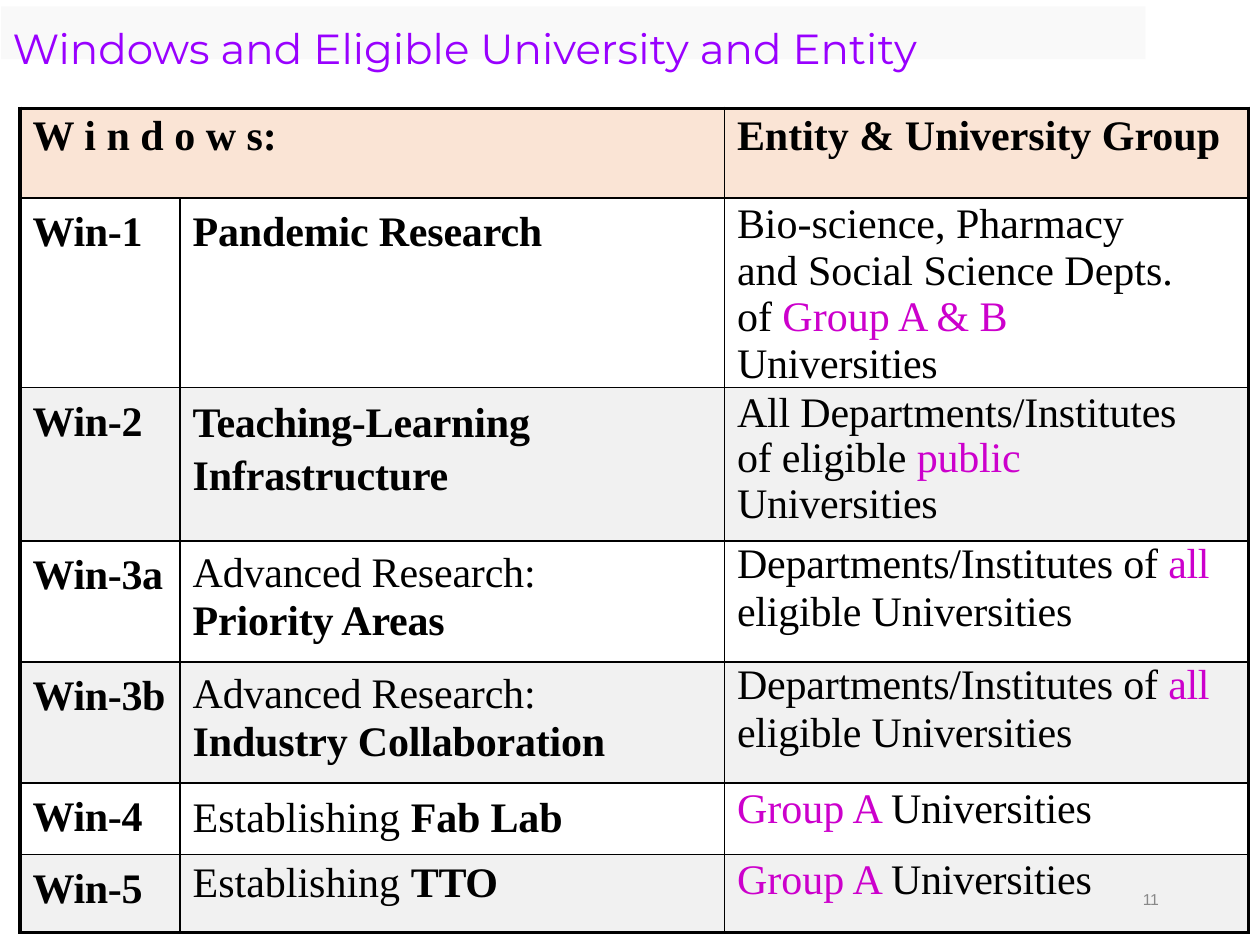
from dataclasses import dataclass

from lxml.etree import SubElement
from pptx import Presentation
from pptx.dml.color import RGBColor
from pptx.enum.shapes import MSO_SHAPE
from pptx.enum.text import MSO_ANCHOR, MSO_AUTO_SIZE, PP_ALIGN
from pptx.oxml.ns import qn
from pptx.slide import Slide
from pptx.table import Table, _Cell
from pptx.text.text import _Paragraph
from pptx.util import Inches, Pt

RECTANGLE = MSO_SHAPE.RECTANGLE
TOP = MSO_ANCHOR.TOP
LEFT = PP_ALIGN.LEFT
NO_FIT = MSO_AUTO_SIZE.NONE


@dataclass(frozen=True)
class Theme:
    title: str = "9900FF"
    text: str = "000000"
    accent: str = "CC00CC"
    number: str = "888888"
    strip: str = "F9F9F9"
    header: str = "FAE4D5"
    plain: str = "FFFFFF"
    band: str = "F1F1F1"
    title_font: str = "Montserrat"
    table_font: str = "Times New Roman"
    number_font: str = "Arial"
    large: int = 24
    small: int = 9
    thin: float = 1
    thick: float = 2.25


@dataclass(frozen=True)
class Words:
    text: str
    bold: bool = False
    color: str = Theme.text
    tracking: float = -0.1


@dataclass(frozen=True)
class Line:
    words: tuple[Words, ...]
    spacing: float | None = None
    before: float = 0


@dataclass(frozen=True)
class Entry:
    lines: tuple[Line, ...]
    top: float = 0
    right: float = 0


THEME = Theme()
COLUMNS = (1.27, 4.32, 4.16)
ROWS = (0.71, 1.42, 1.22, 0.96, 0.96, 0.57, 0.62)


def bold(text: str, tracking: float = -0.1) -> Words:
    """Return bold words."""
    return Words(text, True, tracking=tracking)


def accent(text: str, tracking: float = 0) -> Words:
    """Return words in the accent colour."""
    return Words(text, color=THEME.accent, tracking=tracking)


def single(*words: Words, spacing: float | None = None, before: float = 0,
           top: float = 0, right: float = 0) -> Entry:
    """Return an entry with one paragraph."""
    return Entry((Line(words, spacing, before),), top, right)


def window(name: str) -> Entry:
    """Return the entry that names a window."""
    return single(bold(name, -0.2), spacing=33.1)


def research(area: str) -> Entry:
    """Return an advanced research entry."""
    return Entry((Line((Words("Advanced Research:"),), 31.9), Line((bold(area),), 27.4)))


ALL_UNIVERSITIES = Entry((
    Line((Words("Departments/Institutes of "), accent("all", -0.2)), 26.6),
    Line((Words("eligible Universities"),), 27.4),
))
GROUP_A = single(accent("Group A "), Words("Universities"), spacing=28.1)
HEADER = (
    single(bold("W i n d o w s:", 0), before=2.9, top=0.04),
    None,
    single(bold("Entity & University Group", 0), before=3, top=0.04),
)
ENTRIES = (
    HEADER,
    (window("Win-1"), single(bold("Pandemic Research"), spacing=33.2),
     single(Words("Bio-science, Pharmacy and Social Science Depts. of ", tracking=0),
            accent("Group A & B "), Words("Universities"), before=2, top=0.03, right=0.55)),
    (window("Win-2"),
     single(bold("Teaching-", -0.2), bold("Learning Infrastructure"),
            spacing=30.2, before=3.5, top=0.05),
     single(Words("All Departments/Institutes of eligible "), accent("public ", -0.1),
            Words("Universities"), spacing=25.9, before=2.5, top=0.03, right=0.4)),
    (window("Win-3a"), research("Priority Areas"), ALL_UNIVERSITIES),
    (window("Win-3b"), research("Industry Collaboration"), ALL_UNIVERSITIES),
    (window("Win-4"), single(Words("Establishing ", tracking=0), bold("Fab Lab"), spacing=33.3),
     GROUP_A),
    (window("Win-5"), single(Words("Establishing ", tracking=0), bold("TTO", -0.2),
                             before=3, top=0.04), GROUP_A),
)


def add_span(para: _Paragraph, words: Words, font: str, size: float) -> None:
    """Add one formatted run to a paragraph."""
    span = para.add_run()
    span.text = words.text
    span.font.name = font
    span.font.size = Pt(size)
    span.font.bold = words.bold
    span.font.color.rgb = RGBColor.from_string(words.color)
    span._r.get_or_add_rPr().set("spc", str(round(words.tracking * 100)))


def draw_borders(cell: _Cell, widths: dict[str, float]) -> None:
    """Draw the four borders of a cell."""
    properties = cell._tc.get_or_add_tcPr()
    for index, (side, width) in enumerate(widths.items()):
        border = SubElement(properties, qn(f"a:ln{side}"), w=str(Pt(width)))
        fill = SubElement(border, qn("a:solidFill"))
        SubElement(fill, qn("a:srgbClr"), val=THEME.text)
        properties.insert(index, border)


def fill_cell(cell: _Cell, entry: Entry, color: str) -> None:
    """Write an entry into a cell and colour it."""
    cell.margin_left = Inches(0.1)
    cell.margin_right = Inches(entry.right)
    cell.margin_top = Inches(entry.top)
    cell.margin_bottom = 0
    cell.vertical_anchor = TOP
    cell.fill.solid()
    cell.fill.fore_color.rgb = RGBColor.from_string(color)
    for index, line in enumerate(entry.lines):
        frame = cell.text_frame
        para = frame.add_paragraph() if index else frame.paragraphs[0]
        para.space_before = Pt(line.before)
        if line.spacing:
            para.line_spacing = Pt(line.spacing)
        for words in line.words:
            add_span(para, words, THEME.table_font, THEME.large)


def fill_table(table: Table) -> None:
    """Size the table and fill all its cells."""
    table.first_row = table.horz_banding = False
    for column, width in zip(table.columns, COLUMNS):
        column.width = Inches(width)
    for row, height in zip(table.rows, ROWS):
        row.height = Inches(height)
    table.cell(0, 0).merge(table.cell(0, 1))
    last_row, last_column = len(ROWS) - 1, len(COLUMNS) - 1
    for r, entries in enumerate(ENTRIES):
        color = THEME.header if r == 0 else (THEME.band, THEME.plain)[r % 2]
        for c, entry in enumerate(entries):
            if entry is None:
                continue
            cell = table.cell(r, c)
            fill_cell(cell, entry, color)
            outer = {"L": c == 0, "R": c == last_column, "T": r == 0, "B": r == last_row}
            draw_borders(cell, {side: THEME.thick if edge else THEME.thin
                                for side, edge in outer.items()})


def add_strip(slide: Slide) -> None:
    """Add the pale strip behind the title."""
    strip = slide.shapes.add_shape(RECTANGLE, Inches(0.01), Inches(0.05), Inches(9.08), Inches(0.42))
    strip.shadow.inherit = False
    strip.fill.solid()
    strip.fill.fore_color.rgb = RGBColor.from_string(THEME.strip)
    strip.line.fill.background()


def format_box(box, words: Words, font: str, size: float, left: float, top: float) -> None:
    """Write one left-aligned line into a title or text box."""
    frame = box.text_frame
    frame.word_wrap = True
    frame.auto_size = NO_FIT
    frame.vertical_anchor = TOP
    frame.margin_left, frame.margin_top = Inches(left), Inches(top)
    frame.margin_right = frame.margin_bottom = 0
    para = frame.paragraphs[0]
    para.alignment = LEFT
    add_span(para, words, font, size)


def main() -> None:
    """Build and save the deck."""
    deck = Presentation()
    deck.slide_width, deck.slide_height = Inches(10), Inches(7.5)
    slide = deck.slides.add_slide(deck.slide_layouts[5])
    fill_table(slide.shapes.add_table(len(ROWS), len(COLUMNS), Inches(0.16), Inches(0.86),
                                      Inches(sum(COLUMNS)), Inches(sum(ROWS))).table)
    add_strip(slide)
    title = slide.shapes.title
    title.left, title.top, title.width, title.height = map(Inches, (0.09, 0.17, 9.58, 0.42))
    slide.shapes._spTree.append(title._element)
    format_box(title, Words("Windows and Eligible University and Entity", color=THEME.title,
                            tracking=0), THEME.title_font, THEME.large, 0.01, 0.01)
    number = slide.shapes.add_textbox(Inches(9.03), Inches(6.88), Inches(0.42), Inches(0.36))
    format_box(number, Words("11", color=THEME.number, tracking=-0.2),
               THEME.number_font, THEME.small, 0.04, 0.18)
    deck.save("out.pptx")


if __name__ == "__main__":
    main()
